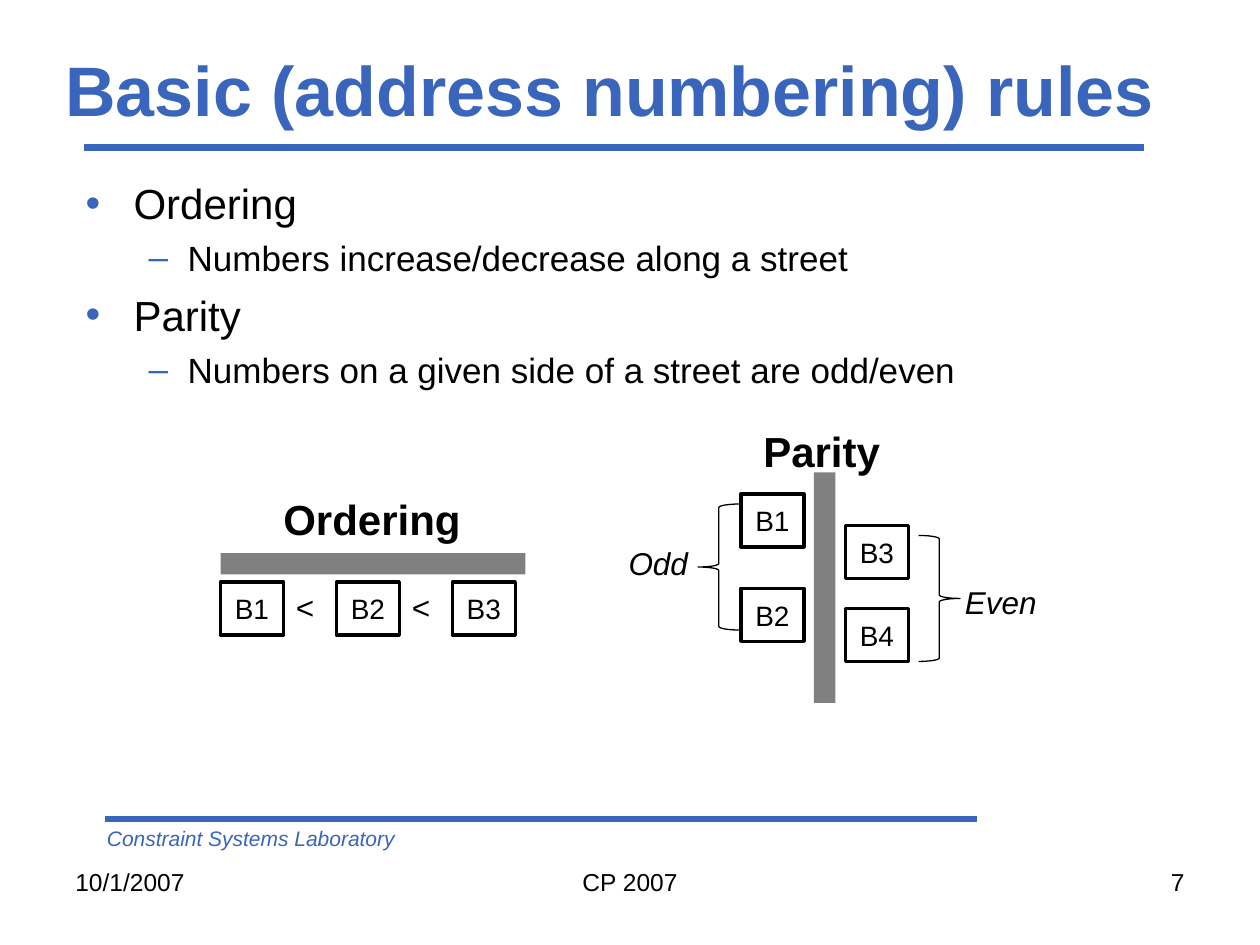
from lxml import etree
from pptx import Presentation
from pptx.dml.color import RGBColor
from pptx.enum.shapes import MSO_CONNECTOR, MSO_SHAPE
from pptx.enum.text import MSO_ANCHOR, MSO_AUTO_SIZE, PP_ALIGN
from pptx.oxml.ns import qn
from pptx.util import Inches, Pt

RECTANGLE, BRACE = MSO_SHAPE.RECTANGLE, MSO_SHAPE.RIGHT_BRACE
STRAIGHT = MSO_CONNECTOR.STRAIGHT
LEFT, CENTER, RIGHT = PP_ALIGN.LEFT, PP_ALIGN.CENTER, PP_ALIGN.RIGHT
TOP, MIDDLE = MSO_ANCHOR.TOP, MSO_ANCHOR.MIDDLE
NO_AUTOSIZE = MSO_AUTO_SIZE.NONE

BLUE, BLACK, WHITE, GRAY = "3A65BC", "000000", "FFFFFF", "808080"
HEADING = {"size": Pt(24), "bold": True}
SIDE = {"size": Pt(18), "italic": True}
HOUSE_W, HOUSE_H, ROAD_W = 0.5, 0.42, 0.17
LEVELS = [
    {"bullet": "•", "margin": 0.38, "hanging": 0.38, "size": 24, "before": 6},
    {"bullet": "–", "margin": 0.81, "hanging": 0.31, "size": 20, "before": 5},
]
RULES = [
    (0, "Ordering"),
    (1, "Numbers increase/decrease along a street"),
    (0, "Parity"),
    (1, "Numbers on a given side of a street are odd/even"),
]


def rgb(color):
    return RGBColor.from_string(color)


def inches(*lengths):
    return [Inches(length) for length in lengths]


def write(paragraph, text, color=BLACK, align=LEFT, **formats):
    paragraph.alignment = align
    run = paragraph.add_run()
    run.text = text
    run.font.color.rgb = rgb(color)
    for name, value in {"name": "Arial", **formats}.items():
        setattr(run.font, name, value)


def label(shapes, box, text, wrap=False, **formats):
    frame = shapes.add_textbox(*inches(*box)).text_frame
    frame.word_wrap = wrap
    write(frame.paragraphs[0], text, **formats)


def block(shapes, kind, box, fill=None, line_width=None):
    shape = shapes.add_shape(kind, *inches(*box))
    shape.shadow.inherit = False
    if fill:
        shape.fill.solid()
        shape.fill.fore_color.rgb = rgb(fill)
    else:
        shape.fill.background()
    if line_width:
        shape.line.color.rgb = rgb(BLACK)
        shape.line.width = Pt(line_width)
    else:
        shape.line.fill.background()
    return shape


def house(shapes, left, top, name):
    frame = block(shapes, RECTANGLE, (left, top, HOUSE_W, HOUSE_H), WHITE, 2).text_frame
    frame.vertical_anchor = MIDDLE
    write(frame.paragraphs[0], name, align=CENTER, size=Pt(16))


def rule_line(shapes, left, top, width):
    line = shapes.add_connector(STRAIGHT, *inches(left, top, left + width, top))
    line.line.color.rgb = rgb(BLUE)
    line.line.width = Pt(4)
    etree.SubElement(line._element.spPr, qn("a:effectLst"))


def place(placeholder, box, anchor):
    placeholder.left, placeholder.top, placeholder.width, placeholder.height = inches(*box)
    frame = placeholder.text_frame
    frame.auto_size = NO_AUTOSIZE
    frame.vertical_anchor = anchor
    return frame


def add_bullet(paragraph, level):
    properties = paragraph._p.get_or_add_pPr()
    properties.set("marL", str(Inches(level["margin"])))
    properties.set("indent", str(-Inches(level["hanging"])))
    color = etree.SubElement(properties, qn("a:buClr"))
    etree.SubElement(color, qn("a:srgbClr"), val=BLUE)
    etree.SubElement(properties, qn("a:buFont"), typeface="Arial")
    etree.SubElement(properties, qn("a:buChar"), char=level["bullet"])


def title_region(slide, box):
    left, top, width, height = box
    frame = place(slide.shapes.title, box, MIDDLE)
    write(frame.paragraphs[0], "Basic (address numbering) rules", BLUE, size=Pt(40), bold=True)
    rule_line(slide.shapes, left + 0.25, top + height + 0.09, width - 0.59)


def rules_region(slide, box):
    frame = place(slide.placeholders[1], box, TOP)
    frame.margin_top = Inches(0.08)
    for number, (depth, text) in enumerate(RULES):
        paragraph = frame.add_paragraph() if number else frame.paragraphs[0]
        level = LEVELS[depth]
        paragraph.level = depth
        add_bullet(paragraph, level)
        paragraph.space_before = Pt(level["before"] if number else 0)
        write(paragraph, text, size=Pt(level["size"]))


def ordering_diagram(slide, box):
    left, top, width, height = box
    shapes = slide.shapes.add_group_shape().shapes
    label(shapes, (left + 0.4, top, 1.61, 0.5), "Ordering", **HEADING)
    block(shapes, RECTANGLE, (left, top + 0.52, width, ROAD_W), GRAY)
    row = top + height - HOUSE_H
    pitch = 0.92
    for column, name in enumerate(("B1", "B2", "B3")):
        house_left = left + column * pitch
        house(shapes, house_left, row, name)
        if column:
            sign_left = house_left - pitch + HOUSE_W
            label(shapes, (sign_left, row, 0.35, 0.4), "<", size=Pt(18))


def parity_diagram(slide, box):
    left, top, width, height = box
    shapes = slide.shapes.add_group_shape().shapes
    label(shapes, (left + 1.07, top, 1.13, 0.5), "Parity", **HEADING)
    road_top = top + 0.42
    block(shapes, RECTANGLE, (left + 1.57, road_top, ROAD_W, height - 0.42), GRAY)
    sides = [
        (0.99, 0.17, 0.75, ("B1", "B2"), 0.65, 180, "Odd", 0, 0.52, 0.67),
        (1.82, 0.42, 0.66, ("B3", "B4"), 2.4, 0, "Even", width - 0.77, 0.83, 0.77),
    ]
    for house_x, first_y, pitch, names, brace_x, turn, side, side_x, side_y, side_w in sides:
        for row, name in enumerate(names):
            house(shapes, left + house_x, road_top + first_y + row * pitch, name)
        brace_box = (left + brace_x, road_top + first_y + 0.08, 0.33, 1)
        block(shapes, BRACE, brace_box, line_width=0.75).rotation = turn
        label(shapes, (left + side_x, road_top + side_y, side_w, 0.4), side, **SIDE)


def footer_region(slide, box):
    left, top, width, height = box
    rule_line(slide.shapes, left + 0.33, top, 6.92)
    label(slide.shapes, (left + 0.25, top, 5.25, 0.3), "Constraint Systems Laboratory",
          wrap=True, color=BLUE, size=Pt(12), italic=True)
    for offset, part_width, text, align in (
        (0, 2.33, "10/1/2007", LEFT),
        ((width - 3.17) / 2, 3.17, "CP 2007", CENTER),
        (width - 2.33, 2.33, "7", RIGHT),
    ):
        part_box = (left + offset, top + height - 0.52, part_width, 0.52)
        label(slide.shapes, part_box, text, wrap=True, align=align, size=Pt(14))


def main():
    deck = Presentation()
    deck.slide_width, deck.slide_height = inches(10, 7.5)
    slide = deck.slides.add_slide(deck.slide_layouts[1])
    title_region(slide, (0.42, 0.33, 9, 0.75))
    rules_region(slide, (0.58, 1.33, 8.92, 2.33))
    ordering_diagram(slide, (1.75, 3.87, 2.42, 1.17))
    parity_diagram(slide, (4.89, 3.33, 3.44, 2.25))
    footer_region(slide, (0.5, 6.5, 9, 0.85))
    deck.save("out.pptx")


if __name__ == "__main__":
    main()
